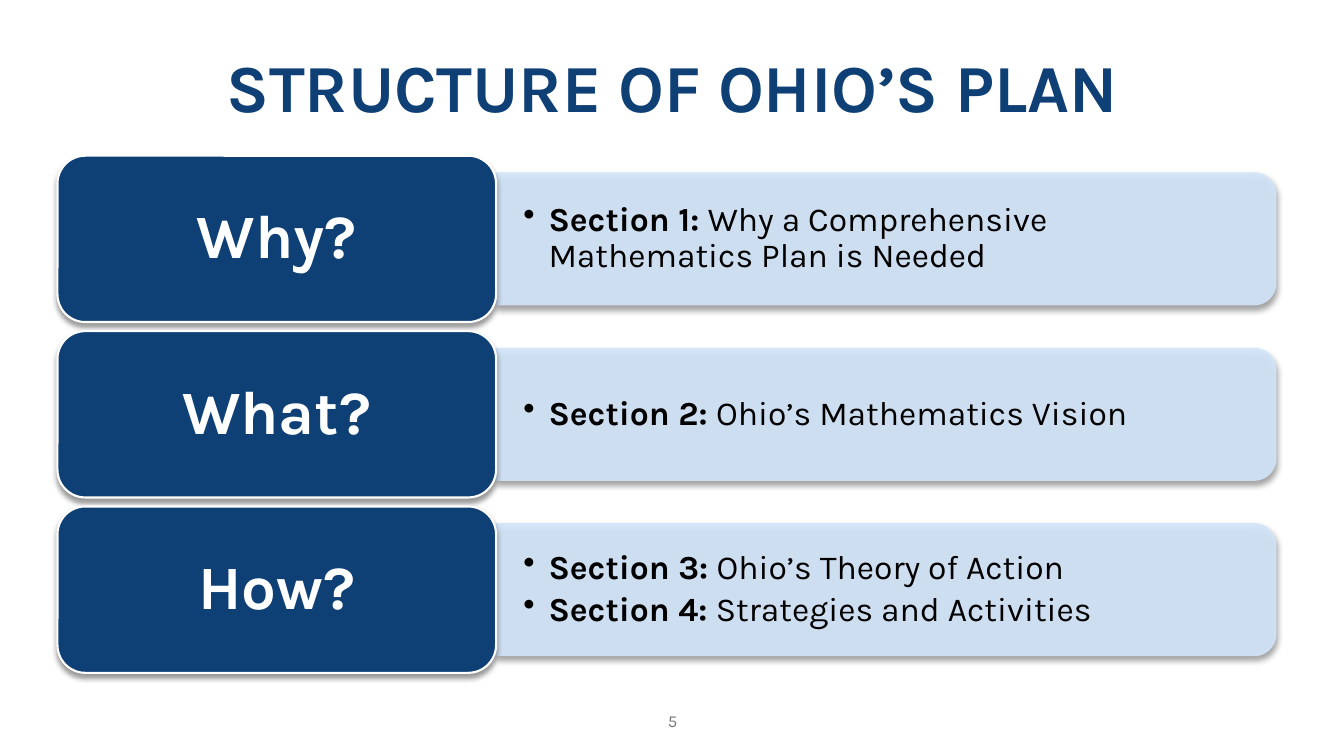
from lxml.etree import SubElement
from pptx import Presentation
from pptx.dml.color import RGBColor
from pptx.enum.shapes import MSO_SHAPE
from pptx.enum.text import MSO_ANCHOR, MSO_AUTO_SIZE, PP_ALIGN
from pptx.oxml.ns import qn
from pptx.util import Inches, Pt

FONT = "Karla"
NAVY, PALE_BLUE, WHITE, BLACK, GREY = "0E3F75", "D2E5FA", "FFFFFF", "000000", "797979"

LABEL_LEFT, LABEL_WIDTH, LABEL_HEIGHT = 0.57, 4.35, 1.65
PANEL_LEFT, PANEL_WIDTH, PANEL_HEIGHT = 4.92, 7.74, 1.32
BULLETS_WIDTH, BULLETS_HEIGHT = 7.68, 1.19
FIRST_CENTER, ROW_PITCH = 2.37, 1.74

ROWS = [
    ("Why?", [("Section 1: ", "Why a Comprehensive Mathematics Plan is Needed")]),
    ("What?", [("Section 2: ", "Ohio’s Mathematics Vision")]),
    ("How?", [("Section 3: ", "Ohio’s Theory of Action"),
              ("Section 4: ", "Strategies and Activities")]),
]


def color(hex_value):
    return RGBColor.from_string(hex_value)


def add_run(paragraph, text, size, hex_value, bold=False):
    run = paragraph.add_run()
    run.text = text
    run.font.name = FONT
    run.font.size = Pt(size)
    run.font.bold = bold
    run.font.color.rgb = color(hex_value)


def set_frame(shape, horizontal=0.1, vertical=0.05):
    """Wrap and middle-anchor the text, with insets in inches."""
    frame = shape.text_frame
    frame.word_wrap = True
    frame.auto_size = MSO_AUTO_SIZE.NONE
    frame.vertical_anchor = MSO_ANCHOR.MIDDLE
    frame.margin_left = frame.margin_right = Inches(horizontal)
    frame.margin_top = frame.margin_bottom = Inches(vertical)
    return frame


def add_centered_text(shape, text, size, hex_value, bold=False, line_spacing=0.9):
    paragraph = set_frame(shape).paragraphs[0]
    paragraph.alignment = PP_ALIGN.CENTER
    paragraph.line_spacing = line_spacing
    add_run(paragraph, text, size, hex_value, bold)


def add_soft_shadow(shape):
    """Drop a 40% black shadow straight down, whatever the rotation."""
    shape.shadow.inherit = False
    effects = shape._element.spPr.find(qn("a:effectLst"))
    shadow = SubElement(effects, qn("a:outerShdw"), blurRad=str(Pt(4)),
                        dist=str(Pt(3)), dir="5400000", rotWithShape="0")
    black = SubElement(shadow, qn("a:srgbClr"), val=BLACK)
    SubElement(black, qn("a:alpha"), val="40000")


def add_panel(slide, center):
    """Add a pale bar rounded on the right: a tall shape turned by 90 degrees."""
    left = PANEL_LEFT + (PANEL_WIDTH - PANEL_HEIGHT) / 2
    panel = slide.shapes.add_shape(
        MSO_SHAPE.ROUND_2_SAME_RECTANGLE, Inches(left), Inches(center - PANEL_WIDTH / 2),
        Inches(PANEL_HEIGHT), Inches(PANEL_WIDTH))
    panel.rotation = 90
    panel.fill.solid()
    panel.fill.fore_color.rgb = color(PALE_BLUE)
    fill_color = panel._element.spPr.find(qn("a:solidFill")).find(qn("a:srgbClr"))
    SubElement(fill_color, qn("a:alpha"), val="90000")
    panel.line.fill.background()
    add_soft_shadow(panel)


def add_bullets(slide, center, sections):
    box = slide.shapes.add_textbox(
        Inches(PANEL_LEFT), Inches(center - BULLETS_HEIGHT / 2),
        Inches(BULLETS_WIDTH), Inches(BULLETS_HEIGHT))
    frame = set_frame(box, 0.27, 0.14)
    for index, (heading, description) in enumerate(sections):
        paragraph = frame.add_paragraph() if index else frame.paragraphs[0]
        properties = paragraph._p.get_or_add_pPr()
        properties.set("marL", str(Inches(0.25)))
        properties.set("indent", str(Inches(-0.25)))
        SubElement(properties, qn("a:buChar"), char="•")
        paragraph.line_spacing = 0.9
        paragraph.space_after = Pt(4)
        add_run(paragraph, heading, 24, BLACK, bold=True)
        add_run(paragraph, description, 24, BLACK)


def add_label(slide, center, text):
    label = slide.shapes.add_shape(
        MSO_SHAPE.ROUNDED_RECTANGLE, Inches(LABEL_LEFT), Inches(center - LABEL_HEIGHT / 2),
        Inches(LABEL_WIDTH), Inches(LABEL_HEIGHT))
    label.fill.solid()
    label.fill.fore_color.rgb = color(NAVY)
    label.line.color.rgb = color(WHITE)
    label.line.width = Pt(1.5)
    add_soft_shadow(label)
    add_centered_text(label, text, 44, WHITE, bold=True)


def add_title(slide, text):
    title = slide.shapes.title
    title.left, title.top = Inches(0.42), Inches(0.4)
    title.width, title.height = Inches(12.5), Inches(1.01)
    add_centered_text(title, text, 48, NAVY, bold=True)


def add_page_number(slide, number):
    box = slide.shapes.add_textbox(Inches(4.42), Inches(6.95), Inches(4.5), Inches(0.4))
    add_centered_text(box, number, 12, GREY, line_spacing=1.0)


def main():
    presentation = Presentation()
    presentation.slide_width = Inches(13.33)
    presentation.slide_height = Inches(7.5)
    title_only = presentation.slide_layouts.get_by_name("Title Only")
    slide = presentation.slides.add_slide(title_only)

    add_title(slide, "STRUCTURE OF OHIO’S PLAN")
    for index, (question, sections) in enumerate(ROWS):
        center = FIRST_CENTER + index * ROW_PITCH
        add_panel(slide, center)
        add_bullets(slide, center, sections)
        add_label(slide, center, question)
    add_page_number(slide, "5")

    presentation.save("out.pptx")


if __name__ == "__main__":
    main()
